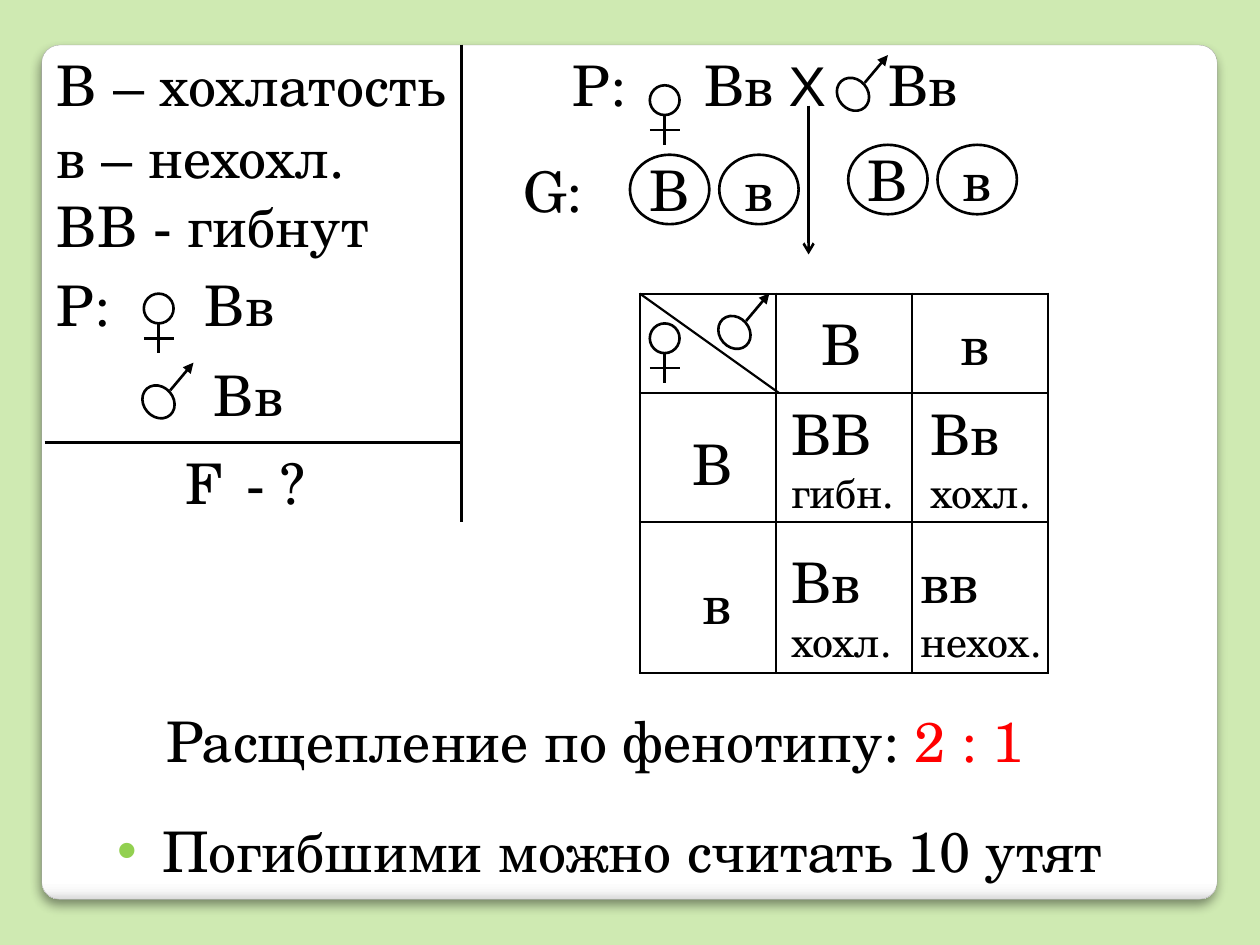
from lxml.etree import SubElement
from pptx import Presentation
from pptx.dml.color import RGBColor
from pptx.enum.shapes import MSO_CONNECTOR, MSO_SHAPE
from pptx.enum.text import MSO_ANCHOR, PP_ALIGN
from pptx.oxml import parse_xml
from pptx.oxml.ns import nsdecls, qn
from pptx.util import Inches, Pt

THEME = {
    "font": "TeX Gyre Schola", "sans": "Arial",
    "big": Pt(32), "small": Pt(24), "line": Pt(1.5), "thin": Pt(1.25),
    "ink": RGBColor.from_string("000000"), "paper": RGBColor.from_string("FFFFFF"),
    "accent": RGBColor.from_string("FF0000"), "back": RGBColor.from_string("CFEAB2"),
    "edge": RGBColor.from_string("A4A4A4"), "bullet": "92D050",
}

prs = Presentation()
prs.slide_width, prs.slide_height = Inches(10), Inches(7.5)
s = prs.slides.add_slide(prs.slide_layouts[6])
s.background.fill.solid()
s.background.fill.fore_color.rgb = THEME["back"]
U = prs.slide_width / 254  # square grid: 254 columns by 190.5 rows


def text(x, y, w, *lines, align=PP_ALIGN.LEFT, wrap=False, tabs=()):
    """Place lines of text; every line after the first is small."""
    rows = 16.3 + 10.1 * (len(lines) - 1)
    tf = s.shapes.add_textbox(*(int(v * U) for v in (x, y, w, rows))).text_frame
    tf.word_wrap = wrap
    for i, parts in enumerate(lines):
        p = tf.add_paragraph() if i else tf.paragraphs[0]
        p.alignment = align
        if tabs:
            stops = SubElement(p._p.get_or_add_pPr(), qn("a:tabLst"))
            for pos in tabs:
                SubElement(stops, qn("a:tab"), pos=str(int(pos * U)), algn="l")
        for part in [parts] if isinstance(parts, str) else parts:
            r = p.add_run()
            r.text = part
            r.font.name = THEME["font"]
            r.font.size = THEME["small" if i else "big"]
            r.font.color.rgb = THEME["ink"]
    return tf.paragraphs[0]


def line(shapes, x1, y1, x2, y2, head=None, width=THEME["line"]):
    """Draw a straight line, with an arrowhead at its end if one is named."""
    c = shapes.add_connector(MSO_CONNECTOR.STRAIGHT, *(int(v * U) for v in (x1, y1, x2, y2)))
    c.line.color.rgb = THEME["ink"]
    c.line.width = width
    if head:
        SubElement(c.line._get_or_add_ln(), qn("a:tailEnd"), type=head)
    SubElement(c._element.spPr, qn("a:effectLst"))


# White card
card = s.shapes.add_shape(MSO_SHAPE.ROUNDED_RECTANGLE,
                          *(int(v * U) for v in (8.4, 9.1, 237, 172.2)))
card.adjustments[0] = 0.021
card.fill.solid()
card.line.color.rgb = THEME["edge"]
card.line.width = Pt(0.16)
stops = "".join(f'<a:gs pos="{pos}000"><a:srgbClr val="{rgb}"/></a:gs>' for pos, rgb in
                [(0, "FFFFFF"), (98, "FFFFFF"), (99, "F7F7F7"), (100, "DADADA")])
spPr = card._element.spPr
spPr.replace(spPr.find(qn("a:solidFill")), parse_xml(
    f'<a:gradFill {nsdecls("a")}><a:gsLst>{stops}</a:gsLst><a:lin ang="5400000"/></a:gradFill>'))
spPr.append(parse_xml(
    f'<a:effectLst {nsdecls("a")}><a:outerShdw blurRad="{Pt(6)}" dist="{Pt(4)}" dir="5400000">'
    '<a:srgbClr val="000000"><a:alpha val="44000"/></a:srgbClr></a:outerShdw></a:effectLst>'))

# Given data
for y, words in [(9, "В – хохлатость"), (23.4, "в – нехохл."), (37.3, "ВВ - гибнут")]:
    text(9, y, 85.3, words, wrap=True)
text(9, 53.3, 60, "Р:\tВв", wrap=True, tabs=[29.8])
text(15, 71.4, 45.2, "\tВв", wrap=True, tabs=[25.6])
text(35, 89.2, 40, "F\t- ?", wrap=True, tabs=[12.2])
line(s.shapes, 93, 9, 93, 105.2)
line(s.shapes, 9, 89.2, 93, 89.2)

# Cross of the parents
p = text(113, 9, 128, ["Р:\tВв\t", "Х", "\tВв"], wrap=True, tabs=[26.5, 43.5, 63.6])
p.runs[1].font.name = THEME["sans"]
line(s.shapes, 163, 21.3, 163, 51.3, "arrow")

# Gametes
text(103, 30.3, 20, "G:")
for x, y, allele in [(127, 31.2, "В"), (145, 31.2, "в"), (171, 29.2, "В"), (189, 29.2, "в")]:
    sp = s.shapes.add_shape(MSO_SHAPE.OVAL, *(int(v * U) for v in (x, y, 16, 14)))
    sp.shadow.inherit = False
    sp.fill.solid()
    sp.fill.fore_color.rgb = THEME["paper"]
    sp.line.color.rgb = THEME["ink"]
    sp.line.width = THEME["line"]
    tf = sp.text_frame
    tf.word_wrap = False
    tf.vertical_anchor = MSO_ANCHOR.MIDDLE
    p = tf.paragraphs[0]
    p.text = allele
    p.alignment = PP_ALIGN.CENTER
    font = p.runs[0].font
    font.name, font.size, font.color.rgb = THEME["font"], THEME["big"], THEME["ink"]

# Punnett square
COLS, ROWS = [27.4] * 3, [20, 26, 30.5]
table = s.shapes.add_table(3, 3, *(int(v * U) for v in (129, 59.2, sum(COLS), sum(ROWS)))).table
table.first_row = table.horz_banding = False
for col, w in zip(table.columns, COLS):
    col.width = int(w * U)
for row, h in zip(table.rows, ROWS):
    row.height = int(h * U)
for cell in table.iter_cells():
    cell.fill.background()
    for i, side in enumerate("LRTB"):
        cell._tc.tcPr.insert(i, parse_xml(
            f'<a:ln{side} {nsdecls("a")} w="{THEME["line"]}"><a:solidFill>'
            f'<a:srgbClr val="{THEME["ink"]}"/></a:solidFill></a:ln{side}>'))
line(s.shapes, 129, 59.2, 157, 79.2, width=THEME["thin"])
for x, y, allele in [(163, 61.2, "В"), (191, 61.2, "в"), (137, 85.3, "В"), (139, 113.3, "в")]:
    text(x, y, 13.5 if allele == "В" else 11.2, allele, align=PP_ALIGN.CENTER)
for x, y, w, genotype, phenotype in [
        (157, 79.2, 26.4, "ВВ", "гибн."), (185, 79.2, 26.2, "Вв", "хохл."),
        (157, 109.2, 26.2, "Вв", "хохл."), (183, 109.2, 30.5, "вв", "нехох.")]:
    text(x, y, w, genotype, phenotype)

# Female and male signs
for sign, x, y in [("female", 29, 59.2), ("female", 131, 17.2), ("female", 131, 65.2),
                   ("male", 28.4, 78), ("male", 168.4, 16), ("male", 144.5, 64)]:
    group = s.shapes.add_group_shape().shapes
    ring = group.add_shape(MSO_SHAPE.OVAL, *(
        int(v * U) for v in (x, y, 6 if sign == "female" else 7.1, 6)))
    ring.shadow.inherit = False
    ring.fill.solid()
    ring.fill.fore_color.rgb = THEME["paper"]
    ring.line.color.rgb = THEME["ink"]
    ring.line.width = THEME["line"]
    if sign == "female":
        line(group, x + 3, y + 6, x + 3, y + 12)
        line(group, x, y + 9, x + 6, y + 9)
    else:
        ring.rotation = 228.6
        line(group, x + 5.9, y + 0.7, x + 10.6, y - 4.9, "triangle")

# Conclusions
p = text(31, 141.2, 180, ["Расщепление по фенотипу: ", "2 : 1"])
p.runs[1].font.color.rgb = THEME["accent"]
p = text(21.1, 163.3, 214, "Погибшими можно считать 10 утят", wrap=True)
pPr = p._p.get_or_add_pPr()
pPr.set("marL", str(int(9.1 * U)))
pPr.set("indent", str(int(-9.1 * U)))
SubElement(SubElement(pPr, qn("a:buClr")), qn("a:srgbClr"), val=THEME["bullet"])
SubElement(pPr, qn("a:buFont"), typeface=THEME["sans"])
SubElement(pPr, qn("a:buChar"), char="•")

prs.save("out.pptx")
